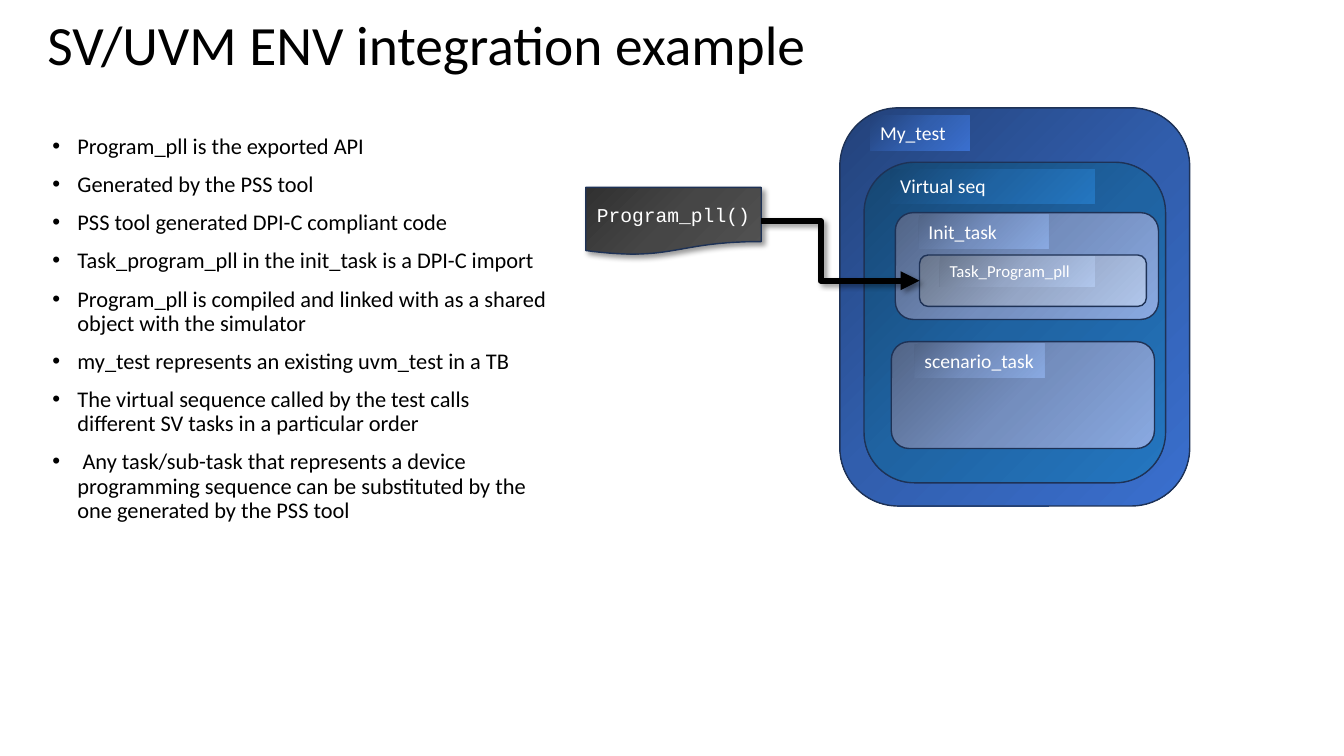
import copy

import pptx
import pptx.dml.color
import pptx.enum.shapes
import pptx.enum.text
import pptx.oxml
import pptx.oxml.ns
import pptx.util

RGBColor = pptx.dml.color.RGBColor
SHAPE = pptx.enum.shapes.MSO_SHAPE
ANCHOR = pptx.enum.text.MSO_ANCHOR
ALIGN = pptx.enum.text.PP_ALIGN
Pt = pptx.util.Pt
qn = pptx.oxml.ns.qn

BLACK = RGBColor(0x00, 0x00, 0x00)
WHITE = RGBColor(0xFF, 0xFF, 0xFF)
OUTLINE = RGBColor(0x1E, 0x32, 0x56)
CHARCOAL = [RGBColor(0x31, 0x31, 0x31), RGBColor(0x46, 0x46, 0x46), RGBColor(0x52, 0x52, 0x52)]
ROYAL = [RGBColor(0x23, 0x42, 0x7A), RGBColor(0x31, 0x5E, 0xAD), RGBColor(0x3A, 0x6F, 0xCE)]
OCEAN = [RGBColor(0x16, 0x46, 0x72), RGBColor(0x1F, 0x63, 0xA2), RGBColor(0x24, 0x76, 0xC0)]
STEEL = [RGBColor(0x51, 0x64, 0x86), RGBColor(0x74, 0x8E, 0xBE), RGBColor(0x89, 0xA9, 0xE1)]
MIST = [RGBColor(0x68, 0x75, 0x8B), RGBColor(0x95, 0xA6, 0xC6), RGBColor(0xB0, 0xC6, 0xEB)]

NAMESPACE = 'xmlns:a="http://schemas.openxmlformats.org/drawingml/2006/main"'
SHADOW = (f'<a:effectLst {NAMESPACE}><a:outerShdw blurRad="50800" dist="38100" dir="2700000" '
          'algn="tl" rotWithShape="0"><a:srgbClr val="000000"><a:alpha val="40000"/></a:srgbClr>'
          '</a:outerShdw></a:effectLst>')

# Slide on a grid of one-inch cells
CELL = pptx.util.Inches(1)
deck = pptx.Presentation()
deck.slide_width, deck.slide_height = round(13.33 * CELL), round(7.5 * CELL)
page = deck.slides.add_slide(deck.slide_layouts[5])


def cells(*lengths):
    return [round(length * CELL) for length in lengths]


def add_block(shapes, kind, place, shades, outlined=True):
    """Add a shape with a diagonal three-colour gradient."""
    block = shapes.add_shape(kind, *cells(*place))
    block.shadow.inherit = False
    block.fill.gradient()
    block.fill.gradient_angle = 315
    stop_list = block.fill._xPr.find(qn("a:gradFill")).find(qn("a:gsLst"))
    stop_list.insert(1, copy.deepcopy(stop_list[0]))
    for index, stop in enumerate(block.fill.gradient_stops):
        stop.position = index / 2
        stop.color.rgb = shades[index]
    if outlined:
        block.line.color.rgb = OUTLINE
        block.line.width = Pt(1)
    else:
        block.line.fill.background()
    return block


# Title
title = page.shapes.title
title.left, title.top, title.width, title.height = cells(0.37, 0.19, 11.43, 0.56)
title.text_frame.text = "SV/UVM ENV integration example"
title.text_frame.word_wrap = True
title.text_frame.auto_size = pptx.enum.text.MSO_AUTO_SIZE.NONE
title.text_frame.vertical_anchor = ANCHOR.MIDDLE
para = title.text_frame.paragraphs[0]
para.alignment = ALIGN.LEFT
para.line_spacing = 0.9
para.font.name, para.font.size = "Calibri", Pt(39.6)
para.font.color.rgb = BLACK

# Bullet list
notes = [
    "Program_pll is the exported API",
    "Generated by the PSS tool",
    "PSS tool generated DPI-C compliant code",
    "Task_program_pll in the init_task is a DPI-C import",
    "Program_pll is compiled and linked with as a shared object with the simulator",
    "my_test represents an existing uvm_test in a TB",
    "The virtual sequence called by the test calls different SV tasks in a particular order",
    " Any task/sub-task that represents a device programming sequence can be substituted "
    "by the one generated by the PSS tool",
]
body = page.shapes.add_textbox(*cells(0.42, 1.29, 5.11, 4.27))
body.text_frame.word_wrap = True
body.text_frame.text = "\n".join(notes)
for index, para in enumerate(body.text_frame.paragraphs):
    properties = para._p.get_or_add_pPr()
    properties.set("marL", str(CELL // 4))
    properties.set("indent", str(-CELL // 4))
    properties.append(pptx.oxml.parse_xml(f'<a:buFont {NAMESPACE} typeface="Arial"/>'))
    properties.append(pptx.oxml.parse_xml(f'<a:buChar {NAMESPACE} char="•"/>'))
    para.line_spacing = 0.9
    para.space_before = Pt(10 if index else 0)
    para.font.name, para.font.size = "Calibri", Pt(16)
    para.font.color.rgb = BLACK

# Exported function
function = add_block(page.shapes, SHAPE.FLOWCHART_DOCUMENT, (5.81, 1.86, 1.74, 0.67), CHARCOAL)
properties = function._element.spPr
properties.replace(properties.find(qn("a:effectLst")), pptx.oxml.parse_xml(SHADOW))
function.text_frame.text = "Program_pll()"
function.text_frame.vertical_anchor = ANCHOR.MIDDLE
para = function.text_frame.paragraphs[0]
para.alignment = ALIGN.CENTER
para.font.name, para.font.size = "Courier New", Pt(14)
para.font.color.rgb = WHITE

# Nested test panels: name, text size, panel place, label place, shades
panels = [
    ("My_test", 14, (8.33, 1.07, 3.47, 3.95), (8.63, 1.15, 0.99, 0.34), ROYAL),
    ("Virtual seq", 14, (8.57, 1.61, 2.99, 3.18), (8.83, 1.68, 2.03, 0.34), OCEAN),
    ("Init_task", 14, (8.88, 2.11, 2.61, 1.06), (9.11, 2.13, 1.29, 0.34), STEEL),
    ("Task_Program_pll", 12, (9.12, 2.53, 2.25, 0.51), (9.32, 2.54, 1.54, 0.3), MIST),
    ("scenario_task", 14, (8.84, 3.39, 2.61, 1.06), (9.07, 3.41, 1.29, 0.34), STEEL),
]
panel_shapes = {}
for name, size, panel_place, label_place, shades in panels:
    group = page.shapes.add_group_shape()
    panel_shapes[name] = add_block(group.shapes, SHAPE.ROUNDED_RECTANGLE, panel_place, shades)
    label = add_block(group.shapes, SHAPE.RECTANGLE, label_place, shades, outlined=False)
    label.text_frame.text = name
    label.text_frame.word_wrap = True
    label.text_frame.auto_size = pptx.enum.text.MSO_AUTO_SIZE.SHAPE_TO_FIT_TEXT
    label.text_frame.vertical_anchor = ANCHOR.TOP
    para = label.text_frame.paragraphs[0]
    para.alignment = ALIGN.LEFT
    para.font.name, para.font.size = "Calibri", Pt(size)
    para.font.color.rgb = WHITE

# Arrow from the function to the task that imports it
arrow = page.shapes.add_connector(pptx.enum.shapes.MSO_CONNECTOR.ELBOW,
                                  *cells(7.55, 2.19, 9.12, 2.79))
arrow.begin_connect(function, 3)
arrow.end_connect(panel_shapes["Task_Program_pll"], 1)
arrow.line.color.rgb = BLACK
arrow.line.width = Pt(4.5)
properties = arrow._element.spPr
properties.find(qn("a:ln")).append(pptx.oxml.parse_xml(f'<a:tailEnd {NAMESPACE} type="triangle"/>'))
properties.append(pptx.oxml.parse_xml(SHADOW))
bend = pptx.oxml.parse_xml(f'<a:avLst {NAMESPACE}><a:gd name="adj1" fmla="val 37700"/></a:avLst>')
geometry = properties.find(qn("a:prstGeom"))
geometry.replace(geometry.find(qn("a:avLst")), bend)

deck.save("out.pptx")
